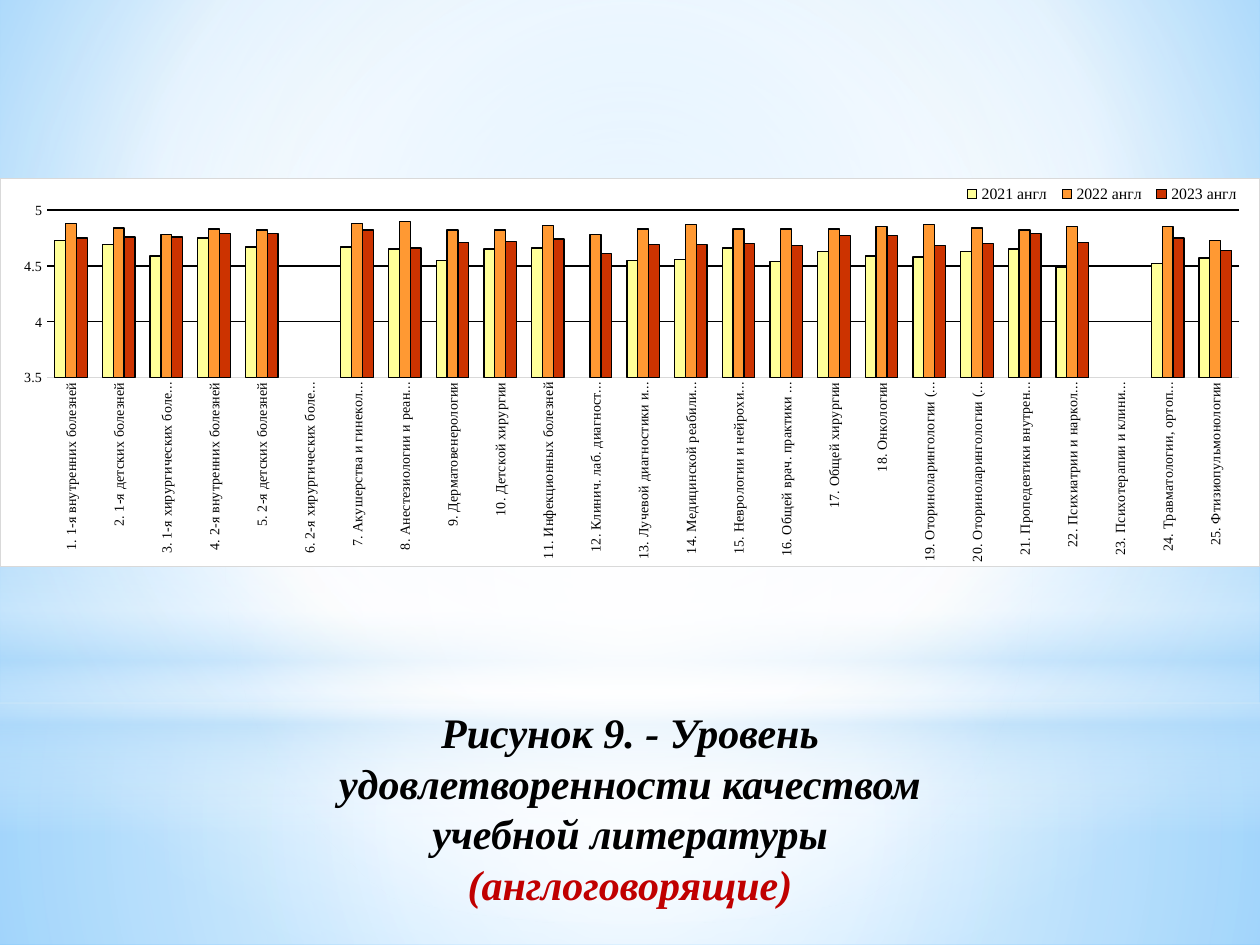
from lxml import etree
from pptx import Presentation
from pptx import util as u
from pptx.chart.data import CategoryChartData
from pptx.dml.color import RGBColor
from pptx.enum import chart as charts, shapes, text
from pptx.oxml import parse_xml
from pptx.oxml.ns import nsdecls, qn

WHITE = RGBColor(0xFF, 0xFF, 0xFF)
BLACK = RGBColor(0, 0, 0)
RED = RGBColor(0xC0, 0, 0)
GREY = RGBColor(0xD9, 0xD9, 0xD9)
PALE_BLUE = RGBColor(0xB4, 0xDC, 0xFA)
SKY = RGBColor(0x9E, 0xD5, 0xFF)
DEEP_SKY = RGBColor(0x5B, 0xB9, 0xFF)
SERIES_COLORS = (RGBColor(0xFF, 0xFF, 0x99), RGBColor(0xFF, 0x99, 0x33), RGBColor(0xCC, 0x33, 0))
SERIF = "Times New Roman"
CENTRE = (50, 50, 50, 50)

# Department, then the 2021, 2022 and 2023 scores
SCORES = [
    ("1. 1-я внутренних болезней", 4.73, 4.88, 4.75),
    ("2. 1-я детских болезней", 4.69, 4.84, 4.76),
    ("3. 1-я хирургических болезней", 4.59, 4.78, 4.76),
    ("4. 2-я внутренних болезней", 4.75, 4.83, 4.79),
    ("5. 2-я детских болезней", 4.67, 4.82, 4.79),
    ("6. 2-я хирургических болезней", 0, 0, 0),
    ("7. Акушерства и гинекологии", 4.67, 4.88, 4.82),
    ("8. Анестезиологии и реанимации", 4.65, 4.9, 4.66),
    ("9. Дерматовенерологии", 4.55, 4.82, 4.71),
    ("10. Детской хирургии", 4.65, 4.82, 4.72),
    ("11. Инфекционных болезней", 4.66, 4.86, 4.74),
    ("12. Клинич. лаб. диагностики и иммунологии", 0, 4.78, 4.61),
    ("13. Лучевой диагностики и лучевой терапии", 4.55, 4.83, 4.69),
    ("14. Медицинской реабилитации", 4.56, 4.87, 4.69),
    ("15. Неврологии и нейрохирургии", 4.66, 4.83, 4.7),
    ("16. Общей врач. практики и поликлинич. терапии", 4.54, 4.83, 4.68),
    ("17. Общей хирургии", 4.63, 4.83, 4.77),
    ("18. Онкологии", 4.59, 4.85, 4.77),
    ("19. Оториноларингологии (лор болезни)", 4.58, 4.87, 4.68),
    ("20. Оториноларингологии (глазные болезни)", 4.63, 4.84, 4.7),
    ("21. Пропедевтики внутренних болезней", 4.65, 4.82, 4.79),
    ("22. Психиатрии и наркологии", 4.49, 4.85, 4.71),
    ("23. Психотерапии и клинич. психодиагностики", 0, 0, 0),
    ("24. Травматологии, ортопедии и ВПХ", 4.52, 4.85, 4.75),
    ("25. Фтизиопульмонологии", 4.57, 4.73, 4.64),
]


def set_attributes(target, values):
    for name, value in values.items():
        setattr(target, name, value)


def format_font(font, size, color=BLACK, **values):
    set_attributes(font, {"name": SERIF, "size": u.Pt(size), **values})
    font.color.rgb = color


def format_line(line, color, width=0.75):
    line.color.rgb = color
    line.width = u.Pt(width)


def set_gradient(fill, element, stops, focus=None):
    """Stops are (position, colour, opacity) in percent; without a focus the gradient runs down."""
    fill.gradient()
    stop_xml = "".join(
        f'<a:gs pos="{position * 1000}"><a:srgbClr val="{color}">'
        f'<a:alpha val="{opacity * 1000}"/></a:srgbClr></a:gs>'
        for position, color, opacity in stops)
    direction = '<a:lin ang="5400000" scaled="0"/>'
    if focus:
        sides = " ".join(f'{side}="{value * 1000}"' for side, value in zip("ltrb", focus))
        direction = f'<a:path path="circle"><a:fillToRect {sides}/></a:path>'
    old = element.find(".//" + qn("a:gradFill"))
    old.getparent().replace(old, parse_xml(
        f'<a:gradFill {nsdecls("a")} rotWithShape="1"><a:gsLst>{stop_xml}</a:gsLst>{direction}</a:gradFill>'))


def add_glow(slide, kind, box, stops, focus=None):
    shape = slide.shapes.add_shape(kind, *box)
    shape.shadow.inherit = False
    shape.line.fill.background()
    set_gradient(shape.fill, shape.element, stops, focus)


def add_backdrop(slide, width):
    set_gradient(slide.background.fill, slide.element,
                 [(0, SKY, 100), (60, WHITE, 100), (100, DEEP_SKY, 100)], (20, 10, 20, 60))
    rectangle, oval = shapes.MSO_SHAPE.RECTANGLE, shapes.MSO_SHAPE.OVAL
    bands = [
        (rectangle, 5.58, 1.92, [(0, WHITE, 91), (37, WHITE, 76), (100, PALE_BLUE, 79)], CENTRE),
        (rectangle, 0, 5.58, [(0, WHITE, 89), (48, WHITE, 62), (100, PALE_BLUE, 79)], CENTRE),
        (rectangle, 4.12, 2.5, [(0, WHITE, 0), (29, WHITE, 30), (45, PALE_BLUE, 40),
                                (55, WHITE, 26), (65, PALE_BLUE, 60), (100, WHITE, 0)], None),
        (oval, 1.75, 5.58, [(0, WHITE, 100), (56, WHITE, 0)], CENTRE),
    ]
    for kind, top, height, stops, focus in bands:
        add_glow(slide, kind, (0, u.Inches(top), width, u.Inches(height)), stops, focus)


def place_caption(slide, box):
    title = slide.shapes.title
    title.element.getparent().append(title.element)  # in front of the backdrop
    set_attributes(title, dict(zip(("left", "top", "width", "height"), box)))
    set_attributes(title.text_frame, {
        "word_wrap": True, "auto_size": text.MSO_AUTO_SIZE.SHAPE_TO_FIT_TEXT,
        "vertical_anchor": text.MSO_ANCHOR.TOP})
    paragraph = title.text_frame.paragraphs[0]
    paragraph.alignment = text.PP_ALIGN.CENTER
    for wording, color in (("Рисунок 9. - Уровень удовлетворенности качеством учебной литературы ", BLACK),
                           ("(англоговорящие)", RED)):
        run = paragraph.add_run()
        run.text = wording
        format_font(run.font, 24, color, bold=True, italic=True)


def make_layout(parent, x, y, width, height, inner=False):
    """Manual chart layout, in fractions of the chart, replacing the parent's own."""
    for old in parent.findall(qn("c:layout")):
        parent.remove(old)
    layout = etree.Element(qn("c:layout"))
    manual = etree.SubElement(layout, qn("c:manualLayout"))
    entries = [("layoutTarget", "inner")] if inner else []
    entries += [("xMode", "edge"), ("yMode", "edge"), ("x", x), ("y", y), ("w", width), ("h", height)]
    for name, value in entries:
        etree.SubElement(manual, qn(f"c:{name}"), val=str(value))
    return layout


def format_axes(chart):
    for axis in (chart.category_axis, chart.value_axis):
        axis.major_tick_mark = axis.minor_tick_mark = charts.XL_TICK_MARK.NONE
        format_font(axis.tick_labels.font, 8)
    format_line(chart.category_axis.format.line, GREY)
    label_body = chart.category_axis._element.find(f'{qn("c:txPr")}/{qn("a:bodyPr")}')
    label_body.set("rot", "-5400000")
    label_body.set("vert", "horz")
    value_axis = chart.value_axis
    set_attributes(value_axis, {"minimum_scale": 3.5, "maximum_scale": 5, "major_unit": 0.5,
                                "has_major_gridlines": True})
    value_axis.format.line.fill.background()
    format_line(value_axis.major_gridlines.format.line, BLACK)


def add_score_chart(slide, box):
    departments, *yearly_scores = zip(*SCORES)
    data = CategoryChartData()
    data.categories = departments
    for year, scores in zip((2021, 2022, 2023), yearly_scores):
        data.add_series(f"{year} англ", scores)
    chart = slide.shapes.add_chart(charts.XL_CHART_TYPE.COLUMN_CLUSTERED, *box, data).chart
    chart.has_title = False
    format_font(chart.font, 10, name="Roboto")
    format_axes(chart)

    plot = chart.plots[0]
    set_attributes(plot, {"gap_width": 139, "overlap": 0, "vary_by_categories": False})
    for series, color in zip(plot.series, SERIES_COLORS):
        series.format.fill.solid()
        series.format.fill.fore_color.rgb = color
        format_line(series.format.line, BLACK)

    chart.has_legend = True
    set_attributes(chart.legend, {"position": charts.XL_LEGEND_POSITION.TOP, "include_in_layout": False})
    format_font(chart.legend.font, 9)
    chart_element = chart.element.find(qn("c:chart"))
    legend = chart_element.find(qn("c:legend"))
    legend.find(qn("c:legendPos")).addnext(make_layout(legend, 0.76, 0.01, 0.23, 0.06))
    plot_area = chart_element.find(qn("c:plotArea"))
    plot_area.insert(0, make_layout(plot_area, 0.037, 0.082, 0.947, 0.432, inner=True))
    chart_element.addnext(parse_xml(
        f'<c:spPr {nsdecls("c", "a")}><a:solidFill><a:srgbClr val="{WHITE}"/></a:solidFill>'
        f'<a:ln w="{u.Pt(0.75)}"><a:solidFill><a:srgbClr val="{GREY}"/></a:solidFill></a:ln></c:spPr>'))


def main():
    presentation = Presentation()
    presentation.slide_width, presentation.slide_height = u.Inches(10), u.Inches(7.5)
    slide = presentation.slides.add_slide(presentation.slide_layouts[5])
    add_backdrop(slide, presentation.slide_width)
    place_caption(slide, (u.Inches(2.5), u.Inches(5.56), u.Inches(5), u.Inches(1.72)))
    add_score_chart(slide, (0, u.Inches(1.41), u.Inches(10), u.Inches(3.09)))
    presentation.save("out.pptx")


if __name__ == "__main__":
    main()
